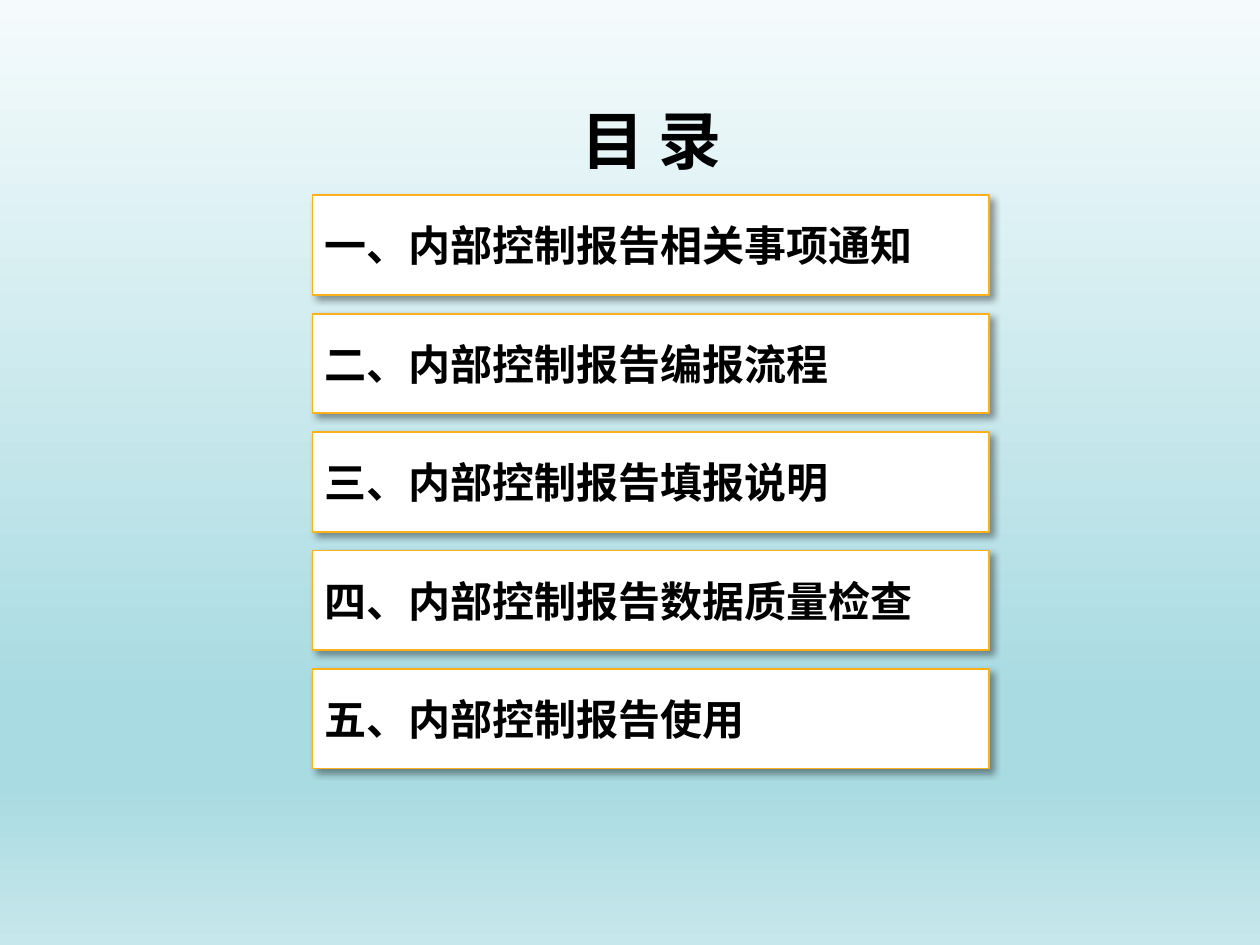
import dataclasses

import lxml.etree
import pptx
import pptx.dml.color
import pptx.enum.shapes
import pptx.enum.text
import pptx.oxml.ns
import pptx.util

Inches = pptx.util.Inches
Pt = pptx.util.Pt
RGB = pptx.dml.color.RGBColor.from_string
qn = pptx.oxml.ns.qn


@dataclasses.dataclass(frozen=True)
class Theme:
    font: str = "Noto Sans CJK SC"
    title_size: int = 36
    item_size: int = 24
    text: str = "000000"
    card: str = "FFFFFF"
    border: str = "FCB11C"
    shadow: str = "000000"
    background: tuple = (
        (0, "F5FBFC"), (74, "A9DBE2"), (83, "A9DBE2"), (100, "C6E7EB"),
    )


THEME = Theme()
TITLE = "目 录"
ITEMS = (
    "一、内部控制报告相关事项通知",
    "二、内部控制报告编报流程",
    "三、内部控制报告填报说明",
    "四、内部控制报告数据质量检查",
    "五、内部控制报告使用",
)
CARD_LEFT, CARD_TOP, CARD_WIDTH, CARD_HEIGHT = 2.48, 1.55, 5.37, 0.79
CARD_STEP = 0.94


def add_element(parent, tag, **attributes):
    values = {key: str(value) for key, value in attributes.items()}
    return lxml.etree.SubElement(parent, qn(tag), values)


def set_background(s):
    fill = s.background.fill
    fill.gradient()
    fill.gradient_angle = 270
    stops = s.element.find(".//" + qn("a:gsLst"))
    for stop in list(stops):
        stops.remove(stop)
    for position, color in THEME.background:
        stop = add_element(stops, "a:gs", pos=position * 1000)
        add_element(stop, "a:srgbClr", val=color)


def add_run(p, text, size):
    r = p.add_run()
    r.text = text
    r.font.size = Pt(size)
    r.font.bold = True
    r.font.name = THEME.font
    r.font.color.rgb = RGB(THEME.text)
    add_element(r.font._element, "a:ea", typeface=THEME.font)


def add_shadow(sp):
    sp.shadow.inherit = False
    effects = sp._element.spPr.find(qn("a:effectLst"))
    shadow = add_element(
        effects, "a:outerShdw", blurRad=Pt(4), dist=Pt(3),
        dir=45 * 60000, algn="tl", rotWithShape=0,
    )
    color = add_element(shadow, "a:srgbClr", val=THEME.shadow)
    add_element(color, "a:alpha", val=40000)


def add_title(s, text):
    sp = s.shapes.add_textbox(
        Inches(4.44), Inches(0.76), Inches(1.46), Inches(0.71))
    tf = sp.text_frame
    tf.word_wrap = False
    tf.auto_size = pptx.enum.text.MSO_AUTO_SIZE.SHAPE_TO_FIT_TEXT
    p = tf.paragraphs[0]
    p.alignment = pptx.enum.text.PP_ALIGN.CENTER
    add_run(p, text, THEME.title_size)


def add_card(s, text, top):
    sp = s.shapes.add_shape(
        pptx.enum.shapes.MSO_SHAPE.RECTANGLE,
        Inches(CARD_LEFT), Inches(top), Inches(CARD_WIDTH), Inches(CARD_HEIGHT))
    sp.fill.solid()
    sp.fill.fore_color.rgb = RGB(THEME.card)
    sp.line.color.rgb = RGB(THEME.border)
    sp.line.width = Pt(1)
    add_shadow(sp)
    tf = sp.text_frame
    tf.word_wrap = True
    tf.vertical_anchor = pptx.enum.text.MSO_ANCHOR.MIDDLE
    p = tf.paragraphs[0]
    p.alignment = pptx.enum.text.PP_ALIGN.LEFT
    add_run(p, text, THEME.item_size)


def main():
    prs = pptx.Presentation()
    prs.slide_width, prs.slide_height = Inches(10), Inches(7.5)
    s = prs.slides.add_slide(prs.slide_layouts[6])
    set_background(s)
    for index, item in enumerate(ITEMS):
        add_card(s, item, CARD_TOP + index * CARD_STEP)
    add_title(s, TITLE)
    prs.save("out.pptx")


if __name__ == "__main__":
    main()
